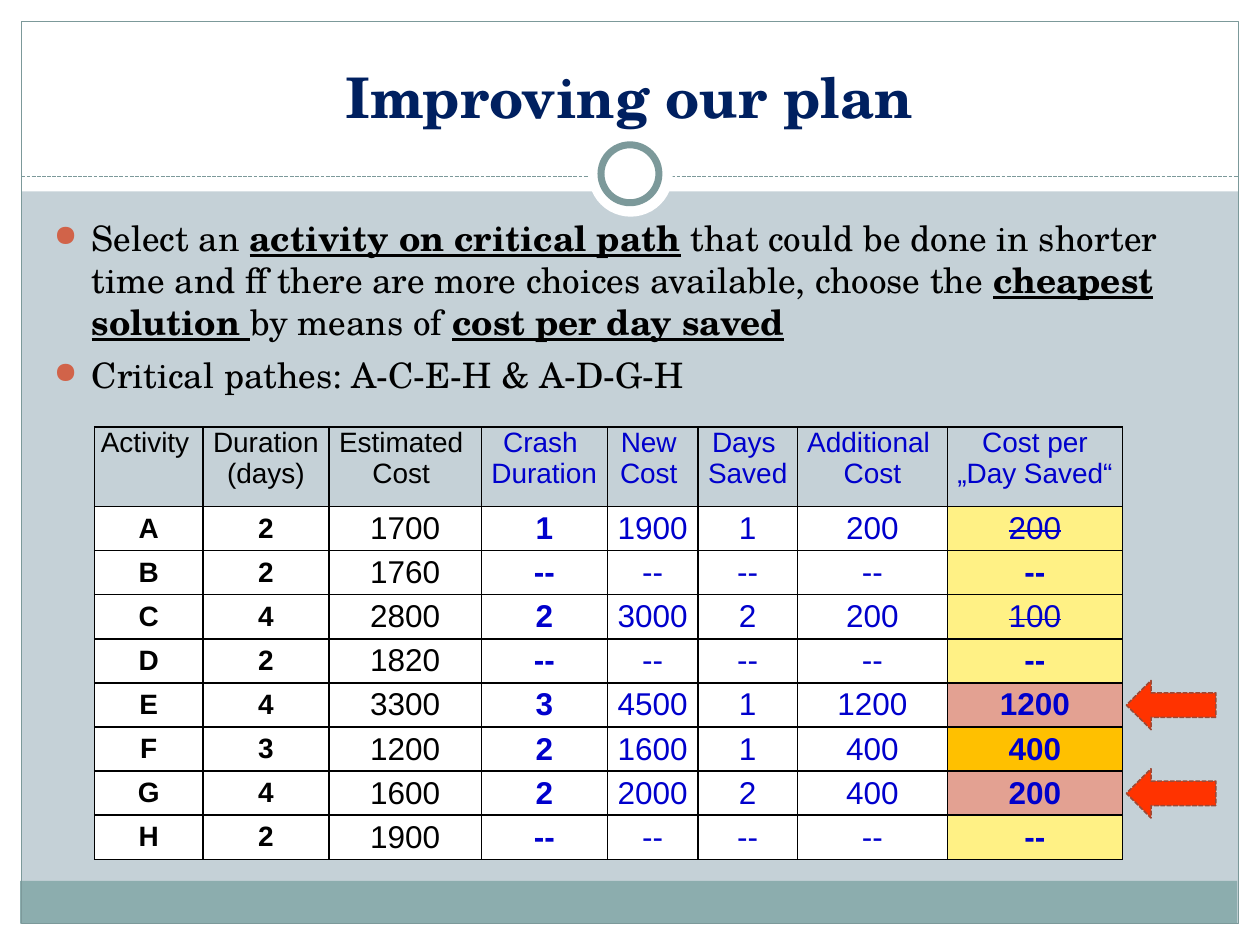
from dataclasses import dataclass
from itertools import accumulate

from lxml.etree import SubElement
from pptx import Presentation
from pptx.dml.color import RGBColor
from pptx.enum.dml import MSO_LINE
from pptx.enum.shapes import MSO_CONNECTOR, MSO_SHAPE as SHAPE
from pptx.enum.text import MSO_ANCHOR as ANCHOR, PP_ALIGN as ALIGN
from pptx.oxml.ns import qn
from pptx.util import Inches, Pt

WIDTH, HEIGHT = Inches(10), Inches(7.5)
SERIF, SANS = "TeX Gyre Schola", "Arial"
WHITE, BLACK, BLUE, TEAL = "FFFFFF", "000000", "0000CC", "7C999A"
YELLOW, ROSE, AMBER = "FFF185", "E3A192", "FFC000"


@dataclass(frozen=True)
class Box:
    """Percentages of the slide's width and height."""
    x: float
    y: float
    w: float
    h: float

    def emu(self) -> tuple:
        return across(self.x), down(self.y), across(self.w), down(self.h)


@dataclass(frozen=True)
class Panel:
    box: Box
    fill: str | None = None
    line: str | None = None
    weight: float = 0.75
    kind: SHAPE = SHAPE.RECTANGLE
    dash: MSO_LINE | None = None
    turn: float = 0


@dataclass(frozen=True)
class Span:
    text: str
    size: float
    font: str = SANS
    color: str = BLACK
    bold: bool = False
    underline: bool = False
    strike: bool = False


@dataclass(frozen=True)
class Activity:
    values: str
    fill: str = YELLOW
    strike: bool = False
    arrow: bool = False


def across(share: float) -> int:
    return round(WIDTH * share / 100)


def down(share: float) -> int:
    return round(HEIGHT * share / 100)


def rgb(color: str) -> RGBColor:
    return RGBColor.from_string(color)


def paint(fill, color: str | None) -> None:
    if color is None:
        fill.background()
    else:
        fill.solid()
        fill.fore_color.rgb = rgb(color)


def draw_panel(s, panel: Panel) -> None:
    sp = s.shapes.add_shape(panel.kind, *panel.box.emu())
    sp.shadow.inherit = False
    sp.rotation = panel.turn
    paint(sp.fill, panel.fill)
    paint(sp.line.fill, panel.line)
    if panel.line:
        sp.line.width = Pt(panel.weight)
        sp.line.dash_style = panel.dash


def draw_divider(s, y: float, start: float, end: float) -> None:
    c = s.shapes.add_connector(MSO_CONNECTOR.STRAIGHT, across(start), down(y), across(end), down(y))
    c.line.color.rgb = rgb(TEAL)
    c.line.width = Pt(0.75)
    c.line.dash_style = MSO_LINE.SQUARE_DOT
    SubElement(c._element.spPr, qn("a:effectLst"))


def write(p, spans: list[Span], align: ALIGN) -> None:
    p.alignment = align
    for span in spans:
        r = p.add_run()
        r.text = span.text
        r.font.name, r.font.size = span.font, Pt(span.size)
        r.font.bold, r.font.underline = span.bold, span.underline
        r.font.color.rgb = rgb(span.color)
        if span.strike:
            r._r.get_or_add_rPr().set("strike", "sngStrike")


def add_bullet(p) -> None:
    pPr = p._p.get_or_add_pPr()
    pPr.set("marL", str(Inches(0.3)))
    pPr.set("indent", str(-Inches(0.3)))
    p.space_after = Pt(6)
    SubElement(SubElement(pPr, qn("a:buClr")), qn("a:srgbClr"), val="D16349")
    SubElement(pPr, qn("a:buSzPct"), val="85000")
    SubElement(pPr, qn("a:buChar"), char="●")


def draw_text(s, box: Box, paragraphs: list[list[Span]], align: ALIGN, anchor: ANCHOR, bullets: bool = False) -> None:
    tf = s.shapes.add_textbox(*box.emu()).text_frame
    tf.word_wrap = True
    tf.vertical_anchor = anchor
    for i, spans in enumerate(paragraphs):
        p = tf.add_paragraph() if i else tf.paragraphs[0]
        write(p, spans, align)
        if bullets:
            add_bullet(p)


def fill_cell(cell, spans: list[Span], fill: str | None, align: ALIGN, anchor: ANCHOR) -> None:
    cell.margin_left = cell.margin_right = Inches(0.05)
    cell.margin_top = cell.margin_bottom = 0
    cell.vertical_anchor = anchor
    tcPr = cell._tc.get_or_add_tcPr()
    for side in ("lnL", "lnR", "lnT", "lnB"):
        ln = SubElement(tcPr, qn(f"a:{side}"), w=str(Pt(1)))
        SubElement(SubElement(ln, qn("a:solidFill")), qn("a:srgbClr"), val=BLACK)
    paint(cell.fill, fill)
    for i, span in enumerate(spans):
        p = cell.text_frame.add_paragraph() if i else cell.text_frame.paragraphs[0]
        write(p, [span], align)


FRAME = [
    Panel(Box(0, 97.73, 100, 2.27), WHITE),
    Panel(Box(0, 0, 100, 20.27), WHITE),
    Panel(Box(0, 0, 1.7, 100), WHITE),
    Panel(Box(98.3, 0, 1.7, 100), WHITE),
    Panel(Box(1.6, 93.2, 96.6, 4.53), "8CADAE"),
    Panel(Box(1.7, 2.27, 96.6, 95.47), line=TEAL),
]
RINGS = [
    Panel(Box(46.7, 14, 6.7, 8.93), WHITE, kind=SHAPE.OVAL),
    Panel(Box(47.7, 15.33, 4.6, 6.13), WHITE, TEAL, 4, SHAPE.OVAL),
]
TITLE = Span("Improving our plan", 32, SERIF, "002060", True)
BODY = [
    [("Select an ", False), ("activity on critical path", True),
     (" that could be done in shorter time and ff there are more choices available, choose the ", False),
     ("cheapest solution ", True), ("by means of ", False), ("cost per day saved", True)],
    [("Critical pathes: A-C-E-H & A-D-G-H", False)],
]
HEADERS = [
    ["Activity"], ["Duration", "(days)"], ["Estimated ", "Cost "], ["Crash ", "Duration"],
    ["New ", "Cost "], ["Days ", "Saved"], ["Additional ", "Cost"], ["Cost per", "„Day Saved“"],
]
ACTIVITIES = [
    Activity("A 2 1700 1 1900 1 200 200", strike=True),
    Activity("B 2 1760 -- -- -- -- --"),
    Activity("C 4 2800 2 3000 2 200 100", strike=True),
    Activity("D 2 1820 -- -- -- -- --"),
    Activity("E 4 3300 3 4500 1 1200 1200", ROSE, arrow=True),
    Activity("F 3 1200 2 1600 1 400 400", AMBER),
    Activity("G 4 1600 2 2000 2 400 200", ROSE, arrow=True),
    Activity("H 2 1900 -- -- -- -- --"),
]
COLUMNS = [8.6, 10, 12.1, 10, 7.2, 7.9, 11.9, 13.9]
ROWS = [8.4] + [4.67] * len(ACTIVITIES)
GRID = Box(7.5, 45.2, sum(COLUMNS), sum(ROWS))
FIRST_BLUE, LAST = 3, len(COLUMNS) - 1


def draw_table(s) -> None:
    table = s.shapes.add_table(len(ROWS), len(COLUMNS), *GRID.emu()).table
    table.first_row = table.horz_banding = False
    for column, share in zip(table.columns, COLUMNS):
        column.width = across(share)
    for row, share in zip(table.rows, ROWS):
        row.height = down(share)
    for c, lines in enumerate(HEADERS):
        spans = [Span(line, 16, color=BLUE if c >= FIRST_BLUE else BLACK) for line in lines]
        fill_cell(table.cell(0, c), spans, None, ALIGN.CENTER if c else ALIGN.JUSTIFY, ANCHOR.TOP)
    for i, activity in enumerate(ACTIVITIES, 1):
        for c, value in enumerate(activity.values.split()):
            strike = c == LAST and activity.strike
            span = Span(value, 16 if c < 2 else 18, color=BLUE if c >= FIRST_BLUE else BLACK,
                        bold=c in (0, 1, 3, LAST) and not strike, strike=strike)
            fill = activity.fill if c == LAST else WHITE
            fill_cell(table.cell(i, c), [span], fill, ALIGN.CENTER, ANCHOR.MIDDLE)


def draw_arrows(s) -> None:
    height = 5.2
    for activity, top, row in zip(ACTIVITIES, accumulate(ROWS, initial=0), ROWS):
        if activity.arrow:
            y = GRID.y + top + ROWS[0] + (row - height) / 2 - (row - ROWS[-1]) / 2
            draw_panel(s, Panel(Box(89.4, y - ROWS[0] + ROWS[-1], 7.1, height), "FF3300", "9B4936", 0.9,
                                SHAPE.RIGHT_ARROW, MSO_LINE.SQUARE_DOT, 180))


def main() -> None:
    prs = Presentation()
    prs.slide_width, prs.slide_height = WIDTH, HEIGHT
    s = prs.slides.add_slide(prs.slide_layouts[6])
    paint(s.background.fill, "C5D1D7")
    for panel in FRAME:
        draw_panel(s, panel)
    draw_divider(s, 18.67, 1.7, 98.3)
    for ring in RINGS:
        draw_panel(s, ring)
    draw_text(s, Box(3.3, 3.33, 93.3, 11.07), [[TITLE]], ALIGN.CENTER, ANCHOR.BOTTOM)
    body = [[Span(t, 20, SERIF, bold=key, underline=key) for t, key in spans] for spans in BODY]
    draw_text(s, Box(3.3, 22.27, 90, 66.67), body, ALIGN.LEFT, ANCHOR.TOP, bullets=True)
    draw_table(s)
    draw_arrows(s)
    prs.save("out.pptx")


if __name__ == "__main__":
    main()
